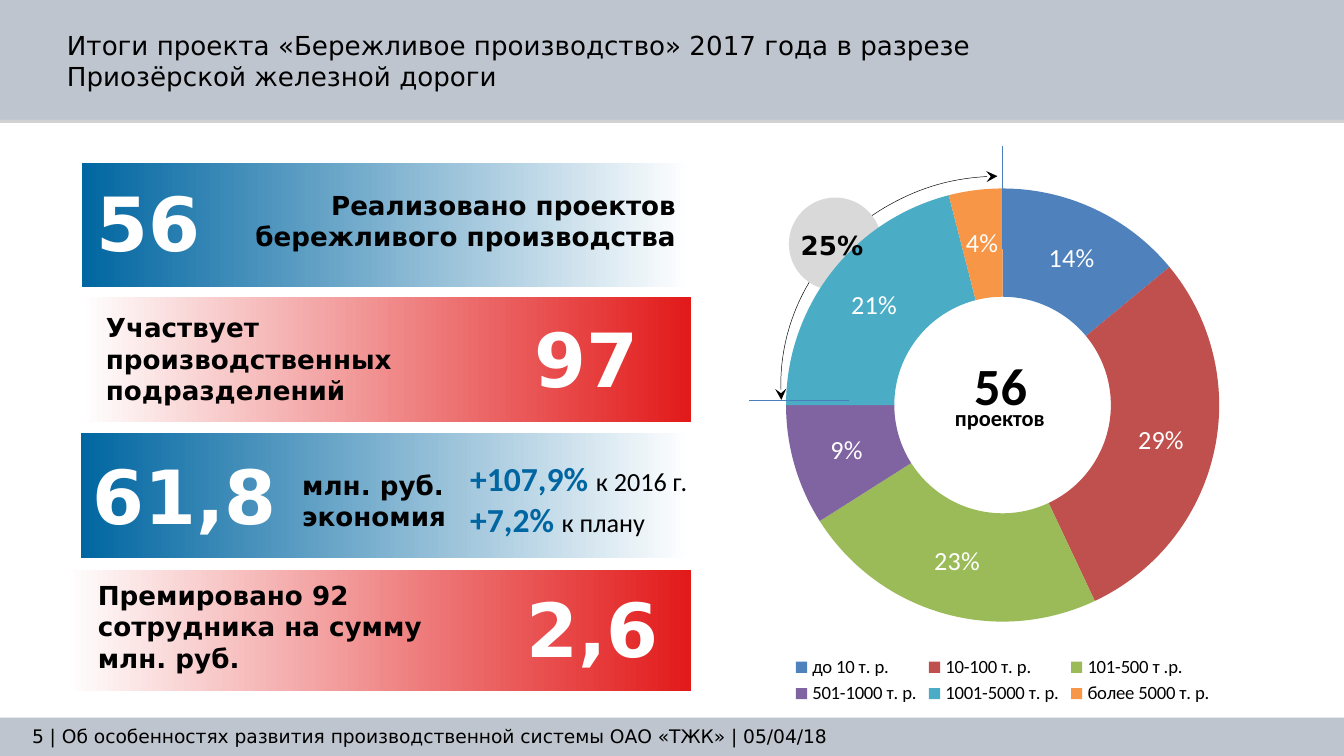
from lxml import etree
from pptx import Presentation
from pptx.chart.data import CategoryChartData
from pptx.dml.color import RGBColor
from pptx.enum.chart import XL_CHART_TYPE, XL_LEGEND_POSITION
from pptx.enum.shapes import MSO_CONNECTOR, MSO_SHAPE
from pptx.enum.text import MSO_ANCHOR, PP_ALIGN
from pptx.oxml import parse_xml
from pptx.oxml.ns import nsdecls, qn
from pptx.util import Inches, Pt

RECT, OVAL, ARC = MSO_SHAPE.RECTANGLE, MSO_SHAPE.OVAL, MSO_SHAPE.ARC
LEFT, CENTER, RIGHT = PP_ALIGN.LEFT, PP_ALIGN.CENTER, PP_ALIGN.RIGHT
MIDDLE = MSO_ANCHOR.MIDDLE
STRAIGHT = MSO_CONNECTOR.STRAIGHT
DOUGHNUT, BOTTOM = XL_CHART_TYPE.DOUGHNUT, XL_LEGEND_POSITION.BOTTOM
SANS, CALIBRI = "DejaVu Sans", "Calibri"
COLORS = {
    "bar": "BFC5CE", "black": "000000", "white": "FFFFFF", "bubble": "D9D9D9",
    "blue": "0066A1", "red": "E21A1A", "mark": "4B7EBC",
}
SLICES = [
    ("до 10 т. р.", 14, "4F81BD"),
    ("10-100 т. р.", 29, "C0504D"),
    ("101-500 т .р.", 23, "9BBB59"),
    ("501-1000 т. р.", 9, "8064A2"),
    ("1001-5000 т. р.", 21, "4BACC6"),
    ("более 5000 т. р.", 4, "F79646"),
]

prs = Presentation()
prs.slide_width, prs.slide_height = Inches(10), Inches(10 * 9 / 16)
s = prs.slides.add_slide(prs.slide_layouts[6])


def add_shape(kind, box, fill=None):
    sp = s.shapes.add_shape(kind, *map(Inches, box))
    sp.shadow.inherit = False
    sp.line.fill.background()
    if fill:
        sp.fill.solid()
        sp.fill.fore_color.rgb = RGBColor.from_string(COLORS[fill])
    else:
        sp.fill.background()
    return sp


def add_text(box, lines, size, font=SANS, color="black", bold=True, align=LEFT):
    """Add a text box; each line is a plain string or a list of (text, size, color, bold) runs."""
    tf = s.shapes.add_textbox(*map(Inches, box)).text_frame
    tf.word_wrap = True
    for i, line in enumerate(lines):
        p = tf.paragraphs[0] if i == 0 else tf.add_paragraph()
        p.alignment = align
        runs = [(line, size, color, bold)] if isinstance(line, str) else line
        for text, run_size, run_color, run_bold in runs:
            r = p.add_run()
            r.text = text
            r.font.name, r.font.size, r.font.bold = font, Pt(run_size), run_bold
            r.font.color.rgb = RGBColor.from_string(COLORS[run_color])
    return tf


# Header and footer bars with a soft lower edge
for top, height in [(0, 0.89), (5.34, 0.29)]:
    sp = add_shape(RECT, (0, top, 10, height), "bar")
    effects = sp._element.spPr.find(qn("a:effectLst"))
    effects.append(parse_xml(
        f'<a:outerShdw {nsdecls("a")} blurRad="0" dist="22860" dir="5400000" rotWithShape="0">'
        '<a:srgbClr val="808080"><a:alpha val="35000"/></a:srgbClr></a:outerShdw>'))

# Arc over the last quarter of the ring, with its bubble
arc = add_shape(ARC, (5.89, 1.23, 3.11, 3.27))
arc.rotation = 270
arc.adjustments[0], arc.adjustments[1] = 159.68, 215.49
arc.line.color.rgb = RGBColor.from_string(COLORS["black"])
arc.line.width = Pt(0.25)
for end in ("a:headEnd", "a:tailEnd"):
    etree.SubElement(arc.line._get_or_add_ln(), qn(end), type="stealth")
add_shape(OVAL, (5.87, 1.47, 0.69, 0.69), "bubble")

tf = add_text((0.14, 5.33, 9.04, 0.3),
              ["5 | Об особенностях развития производственной системы ОАО «ТЖК» | 05/04/18"],
              10, bold=False)
tf.vertical_anchor = MIDDLE
tf = add_text((0, 0.17, 10, 0.57),
              ["Итоги проекта «Бережливое производство» 2017 года в разрезе",
               "Приозёрской железной дороги"], 14, bold=False)
for p in tf.paragraphs:
    p._p.get_or_add_pPr().set("marL", str(Inches(0.4)))

# Result bands: blue fades to the right, red to the left
for box, color, angle in [
    ((0.61, 1.21, 4.53, 0.93), "blue", 180),
    ((0.6, 2.21, 4.54, 0.93), "red", 0),
    ((0.6, 3.22, 4.54, 0.93), "blue", 180),
    ((0.48, 4.24, 4.66, 0.9), "red", 0),
]:
    band = add_shape(RECT, box)
    band.fill.gradient()
    band.fill.gradient_angle = angle
    for stop, name, position in zip(band.fill.gradient_stops, ("white", color), (0, 1)):
        stop.color.rgb = RGBColor.from_string(COLORS[name])
        stop.position = position

for number, box in [
    ("56", (0.62, 1.27, 2.41, 0.77)),
    ("97", (3.88, 2.28, 1.26, 0.77)),
    ("61,8", (0.59, 3.3, 1.62, 0.77)),
    ("2,6", (3.82, 4.29, 1.27, 0.77)),
]:
    add_text(box, [number], 40, color="white")

for lines, box, align in [
    (["Реализовано проектов бережливого производства"], (1.7, 1.36, 3.43, 0.57), RIGHT),
    (["Участвует производственных подразделений"], (0.69, 2.27, 3.1, 0.81), LEFT),
    (["млн. руб.", "экономия"], (2.15, 3.44, 1.32, 0.57), LEFT),
    (["Премировано 92 сотрудника на сумму млн. руб."], (0.63, 4.26, 3.1, 0.81), LEFT),
]:
    add_text(box, lines, 14, align=align)

# Ring of projects by size
data = CategoryChartData()
data.categories = [name for name, _, _ in SLICES]
data.add_series("Series 1", [value for _, value, _ in SLICES])
chart = s.shapes.add_chart(DOUGHNUT, *map(Inches, (5.09, 1.27, 4.74, 4.01)), data).chart
chart.has_title = False
chart.font.name, chart.font.size = CALIBRI, Pt(10)
chart.font.color.rgb = RGBColor.from_string(COLORS["black"])
chart.has_legend = True
chart.legend.position = BOTTOM
chart.legend.include_in_layout = False
plot = chart.plots[0]
plot.vary_by_categories = True
for i, (_, _, color) in enumerate(SLICES):
    fill = plot.series[0].points[i].format.fill
    fill.solid()
    fill.fore_color.rgb = RGBColor.from_string(color)
labels = plot.series[0].data_labels
labels.show_percentage, labels.show_value = True, False
labels.number_format, labels.number_format_is_linked = "0%", False
labels.font.name, labels.font.size = CALIBRI, Pt(14)
labels.font.color.rgb = RGBColor.from_string(COLORS["white"])

# Clear chart background and fixed place for the ring
chart_xml = chart._chartSpace.find(qn("c:chart"))
chart_xml.addnext(parse_xml(
    f'<c:spPr {nsdecls("c", "a")}><a:noFill/><a:ln><a:noFill/></a:ln></c:spPr>'))
plot_area = chart_xml.find(qn("c:plotArea"))
for old in plot_area.findall(qn("c:layout")):
    plot_area.remove(old)
plot_area.insert(0, parse_xml(
    f'<c:layout {nsdecls("c")}><c:manualLayout><c:layoutTarget val="inner"/>'
    '<c:xMode val="edge"/><c:yMode val="edge"/><c:x val="0.16"/><c:y val="0.03"/>'
    '<c:w val="0.68"/><c:h val="0.81"/></c:manualLayout></c:layout>'))

add_text((6.82, 2.58, 1.25, 0.57), ["56"], 28, CALIBRI, align=CENTER)
add_text((6.89, 2.96, 1.1, 0.3), ["проектов"], 12, CALIBRI, align=CENTER)
add_text((5.86, 1.66, 0.73, 0.34), ["25%"], 14).word_wrap = False
add_text((3.4, 3.36, 2.73, 0.71),
         [[(growth, 18, "blue", True), (base, 14, "black", False)]
          for growth, base in [("+107,9% ", "к 2016 г."), ("+7,2% ", "к плану")]],
         18, CALIBRI)

# Limits of the quarter
for ends in [(6.32, 2.98, 5.57, 2.98), (7.46, 1.85, 7.46, 1.09)]:
    mark = s.shapes.add_connector(STRAIGHT, *map(Inches, ends))
    mark.line.color.rgb = RGBColor.from_string(COLORS["mark"])
    mark.line.width = Pt(0.75)
    etree.SubElement(mark._element.spPr, qn("a:effectLst"))

prs.save("out.pptx")
